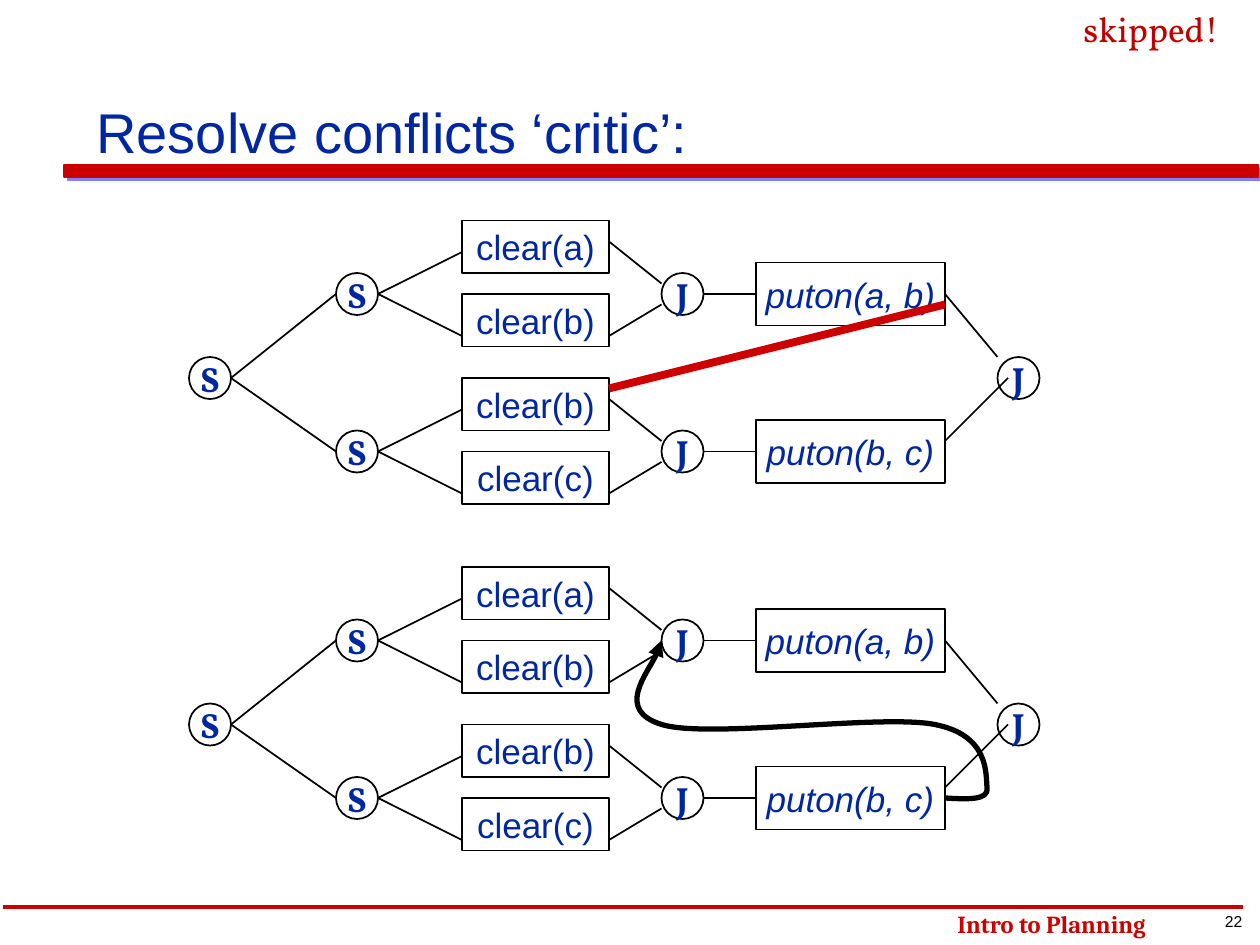
from lxml import etree
from pptx import Presentation
from pptx.dml.color import RGBColor
from pptx.enum.shapes import MSO_CONNECTOR, MSO_SHAPE
from pptx.enum.text import MSO_ANCHOR, MSO_AUTO_SIZE, PP_ALIGN
from pptx.oxml.ns import qn
from pptx.util import Pt

PX = 9525  # 96 px to the inch
RECT, OVAL = MSO_SHAPE.RECTANGLE, MSO_SHAPE.OVAL
STRAIGHT = MSO_CONNECTOR.STRAIGHT
LEFT, CENTER = PP_ALIGN.LEFT, PP_ALIGN.CENTER
TOP, MIDDLE, BOTTOM = MSO_ANCHOR.TOP, MSO_ANCHOR.MIDDLE, MSO_ANCHOR.BOTTOM
FIT = MSO_AUTO_SIZE.SHAPE_TO_FIT_TEXT


class Theme:
    black, red = RGBColor(0, 0, 0), RGBColor(0xCC, 0, 0)
    blue, note_red = RGBColor(0, 0x27, 0x9F), RGBColor(0xC0, 0, 0)
    shade = "8080FF"
    thin, rule, curve, thick = 1, 2, 3, 4.5
    step = {"name": "Arial", "size": Pt(20), "color": blue}
    goal = {**step, "italic": True}
    node = {**step, "name": "Vollkorn", "bold": True}
    title = {**step, "size": Pt(32)}
    note = {"name": "Vollkorn", "size": Pt(20), "color": note_red}
    foot = {"name": "Cambria", "size": Pt(14), "color": red, "bold": True}
    page = {"name": "Arial", "size": Pt(9), "color": black}


def scale(*nums):
    return [n * PX for n in nums]


def write(shape, text, style, align=LEFT, **frame):
    body = shape.text_frame
    for key, value in frame.items():
        setattr(body, key, value)
    para = body.paragraphs[0]
    para.alignment = align
    run = para.add_run()
    run.text = text
    for key, value in style.items():
        if key == "color":
            run.font.color.rgb = value
        else:
            setattr(run.font, key, value)


def label(slide, box, text, style, align=LEFT, **frame):
    write(slide.shapes.add_textbox(*scale(*box)), text, style, align, **frame)


def stroke(shape, color, width):
    shape.line.color.rgb = color
    shape.line.width = Pt(width)


def block(slide, kind, box, text, style):
    shape = slide.shapes.add_shape(kind, *scale(*box))
    shape.shadow.inherit = False
    shape.fill.background()
    stroke(shape, Theme.black, Theme.thin)
    write(shape, text, style, CENTER, word_wrap=False, vertical_anchor=MIDDLE)
    return shape


def node(slide, x, y, text):
    block(slide, OVAL, (x, y, 32, 32), text, Theme.node)


def link(slide, x, y, ends, color=Theme.black, width=Theme.thin):
    """Draw a line whose ends are relative to x, y."""
    x1, y1, x2, y2 = ends
    line = slide.shapes.add_connector(
        STRAIGHT, *scale(x + x1, y + y1, x + x2, y + y2))
    stroke(line, color, width)
    etree.SubElement(line._element.spPr, qn("a:effectLst"))
    return line


def branch(slide, x, y, steps, goal):
    """One split and join of two steps that leads to a goal box."""
    for row, step in enumerate(steps):
        block(slide, RECT, (x + 96, y + 56 * row, 112, 40), step, Theme.step)
    node(slide, x, y + 40, "S")
    node(slide, x + 248, y + 40, "J")
    for ends in ((32, 56, 96, 24), (32, 56, 96, 88),
                 (208, 16, 248, 48), (208, 88, 248, 64)):
        link(slide, x, y, ends)
    link(slide, x, y, (280, 56, 320, 56)).end_connect(goal, 1)


def plan(slide, x, y):
    goals = [block(slide, RECT, (x + 432, y + 32 + 120 * row, 144, 48),
                   text, Theme.goal)
             for row, text in enumerate(("puton(a, b)", "puton(b, c)"))]
    node(slide, x, y + 104, "S")
    node(slide, x + 616, y + 104, "J")
    for ends in ((32, 120, 112, 56), (32, 120, 112, 176),
                 (576, 168, 624, 120)):
        link(slide, x, y, ends)
    link(slide, x, y, (576, 56, 616, 104)).begin_connect(goals[0], 3)
    pairs = ("clear(a)", "clear(b)"), ("clear(b)", "clear(c)")
    for row, (steps, goal) in enumerate(zip(pairs, goals)):
        branch(slide, x + 112, y + 120 * row, steps, goal)


def order(slide, x, y):
    """Curved arrow from the lower goal back to the upper join."""
    points = [(576, 176),
              (592, 177), (610, 178), (608, 168),
              (607, 158), (610, 128), (568, 120),
              (527, 112), (395, 131), (360, 120),
              (325, 109), (360, 66), (360, 56)]
    (left, top), *rest = [(x + a, y + b) for a, b in points]
    pen = slide.shapes.build_freeform(left, top, PX)
    pen.add_line_segments(rest, close=False)
    shape = pen.convert_to_shape()
    shape.shadow.inherit = False
    shape.fill.background()
    stroke(shape, Theme.black, Theme.curve)
    etree.SubElement(shape.line._get_or_add_ln(), qn("a:tailEnd"),
                     type="triangle")
    path = next(shape._element.iter(qn("a:path")))
    lines = path.findall(qn("a:lnTo"))
    for i in range(0, len(lines), 3):
        bend = etree.SubElement(path, qn("a:cubicBezTo"))
        for line in lines[i:i + 3]:
            bend.append(line[0])
            path.remove(line)


def header(slide, x, y):
    bar = slide.shapes.add_shape(RECT, *scale(x, y + 117, 910, 9))
    bar.fill.solid()
    bar.fill.fore_color.rgb = Theme.red
    stroke(bar, Theme.red, Theme.thin)
    bar.shadow.inherit = False
    glow = etree.SubElement(bar._element.spPr.find(qn("a:effectLst")),
                            qn("a:outerShdw"), dist=str(Pt(2.8)),
                            dir="2700000", algn="ctr", rotWithShape="0")
    etree.SubElement(glow, qn("a:srgbClr"), val=Theme.shade)
    label(slide, (x + 15, y, 814, 121), "Resolve conflicts ‘critic’:",
          Theme.title, word_wrap=True, vertical_anchor=BOTTOM)
    label(slide, (x + 767, y - 8, 123, 42), "skipped!", Theme.note,
          word_wrap=False, auto_size=FIT)


def footer(slide, x, y):
    label(slide, (x + 921, y - 1, 34, 24), "22", Theme.page, CENTER,
          word_wrap=False, vertical_anchor=TOP, auto_size=FIT)
    link(slide, x, y, (945, 0, 0, 0), Theme.red, Theme.rule)
    label(slide, (x + 718, y - 3, 224, 32), "Intro to Planning", Theme.foot,
          word_wrap=True, auto_size=FIT)


def main():
    deck = Presentation()
    deck.slide_width, deck.slide_height = scale(960, 720)
    slide = deck.slides.add_slide(deck.slide_layouts[6])
    header(slide, 49, 9)
    footer(slide, 2, 691)
    plan(slide, 144, 168)
    link(slide, 144, 168, (576, 64, 320, 128), Theme.red, Theme.thick)
    plan(slide, 144, 432)
    order(slide, 144, 432)
    deck.save("out.pptx")


if __name__ == "__main__":
    main()
